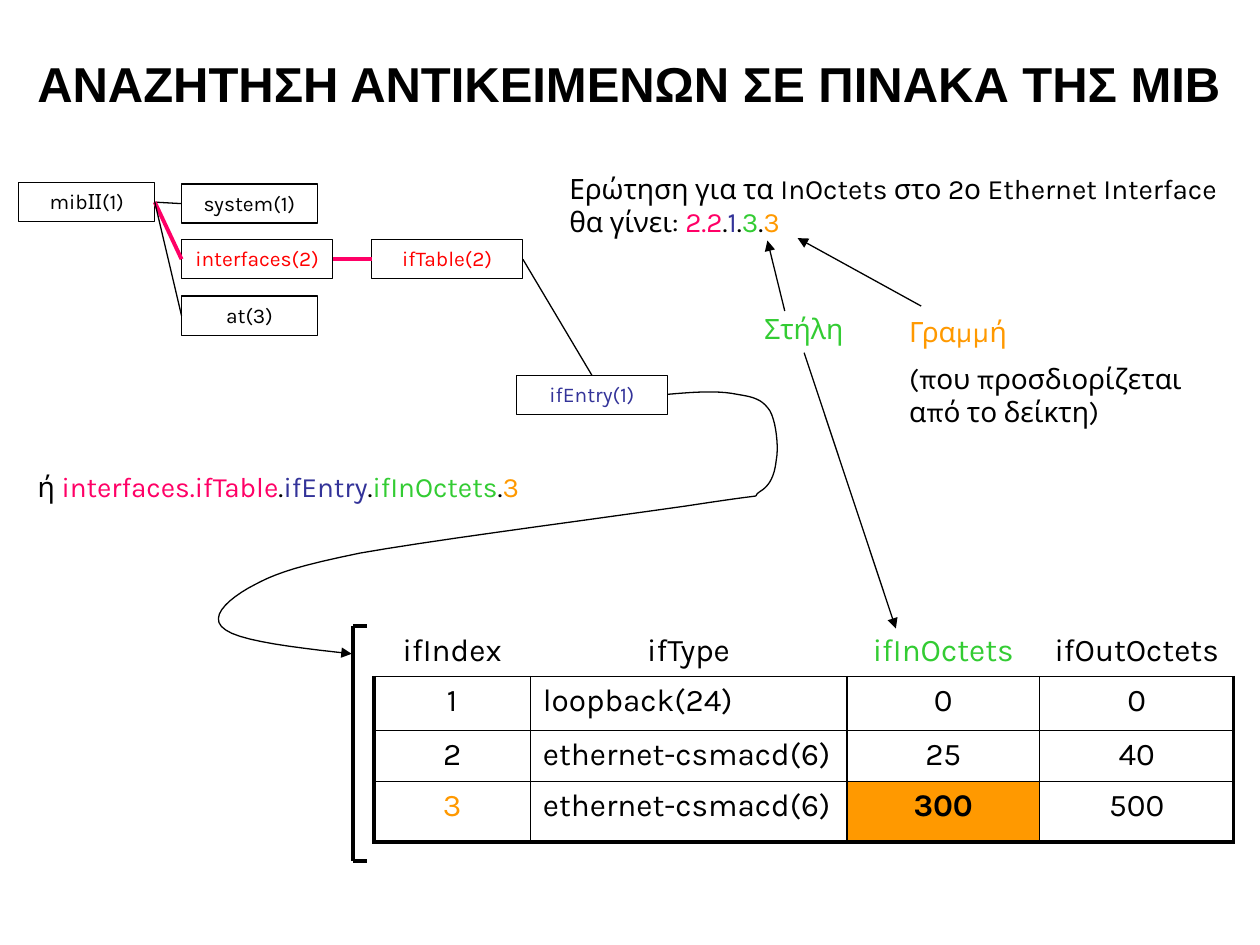
import pptx
import pptx.util
import pptx.dml.color
import pptx.enum.shapes
import pptx.enum.text
import pptx.oxml.ns
from lxml import etree

Cm, Pt = pptx.util.Cm, pptx.util.Pt
qn = pptx.oxml.ns.qn
ALIGN = pptx.enum.text.PP_ALIGN
COLORS = {"black": "000000", "red": "FF0000", "pink": "FF0066",
          "blue": "333399", "green": "33CC33", "orange": "FF9900"}
TOP, LEFT, RIGHT = 0, 1, 3  # connection sites of a rectangle


def rgb(name):
    return pptx.dml.color.RGBColor.from_string(COLORS[name])


def bezier(start, segments, steps=10):
    """Points along a chain of cubic curves given as (control, control, end)."""
    points = [start]
    for c1, c2, end in segments:
        for t in (i / steps for i in range(1, steps + 1)):
            weights = ((1 - t) ** 3, 3 * t * (1 - t) ** 2, 3 * t * t * (1 - t), t ** 3)
            points.append(tuple(sum(w * p[axis] for w, p in zip(weights, (start, c1, c2, end)))
                                for axis in (0, 1)))
        start = end
    return points


class Diagram:
    font = "Karla"
    thin, thick = 0.75, 2.25

    def __init__(self, slide):
        self.s = slide

    def add_runs(self, p, runs, size, align=ALIGN.LEFT, bold=False, font=None):
        """Fill a paragraph with (text, colour) runs."""
        p.alignment = align
        for text, color in runs:
            r = p.add_run()
            r.text = text
            r.font.name, r.font.size, r.font.bold = font or self.font, Pt(size), bold
            r.font.color.rgb = rgb(color)

    def stroke(self, sp, color, width, arrow=False):
        sp.line.color.rgb = rgb(color)
        sp.line.width = Pt(width)
        if arrow:
            etree.SubElement(sp.line._get_or_add_ln(), qn("a:tailEnd"), type="triangle")

    def title(self, text, x, y, w, h):
        sp = self.s.shapes.title
        sp.left, sp.top, sp.width, sp.height = Cm(x), Cm(y), Cm(w), Cm(h)
        tf = sp.text_frame
        tf.vertical_anchor = pptx.enum.text.MSO_ANCHOR.MIDDLE
        self.add_runs(tf.paragraphs[0], [(text, "black")], 28, ALIGN.CENTER, True, "Arial")

    def fit(self, tf):
        tf.word_wrap = True
        tf.auto_size = pptx.enum.text.MSO_AUTO_SIZE.SHAPE_TO_FIT_TEXT
        tf.vertical_anchor = pptx.enum.text.MSO_ANCHOR.TOP

    def node(self, text, x, y, w, color="black"):
        sp = self.s.shapes.add_shape(pptx.enum.shapes.MSO_SHAPE.RECTANGLE,
                                     Cm(x), Cm(y), Cm(w), Cm(0.79))
        sp.shadow.inherit = False
        sp.fill.background()
        self.stroke(sp, "black", self.thin)
        self.fit(sp.text_frame)
        self.add_runs(sp.text_frame.paragraphs[0], [(text, color)], 12, ALIGN.CENTER)
        return sp

    def text(self, x, y, w, h, *paragraphs):
        tf = self.s.shapes.add_textbox(Cm(x), Cm(y), Cm(w), Cm(h)).text_frame
        self.fit(tf)
        for i, runs in enumerate(paragraphs):
            p = tf.add_paragraph() if i else tf.paragraphs[0]
            if i:
                p.space_before = Pt(7.5)
            self.add_runs(p, runs, 16)

    def line(self, x1, y1, x2, y2, color="black", width=thin, arrow=False):
        cx = self.s.shapes.add_connector(pptx.enum.shapes.MSO_CONNECTOR.STRAIGHT,
                                         Cm(x1), Cm(y1), Cm(x2), Cm(y2))
        self.stroke(cx, color, width, arrow)
        etree.SubElement(cx._element.spPr, qn("a:effectLst"))
        return cx

    def link(self, a, b, site=LEFT, color="black", width=thin):
        """Join the right side of node a to a side of node b."""
        cx = self.line(0, 0, 1, 1, color, width)
        cx.begin_connect(a, RIGHT)
        cx.end_connect(b, site)

    def curve(self, start, segments):
        points = [(Cm(x), Cm(y)) for x, y in bezier(start, segments)]
        builder = self.s.shapes.build_freeform(*points[0])
        builder.add_line_segments(points[1:], close=False)
        sp = builder.convert_to_shape()
        sp.shadow.inherit = False
        sp.fill.background()
        self.stroke(sp, "black", self.thin, arrow=True)

    def border(self, cell, widths):
        tcPr = cell._tc.get_or_add_tcPr()
        for i, (side, width) in enumerate(zip("LRTB", widths)):
            ln = etree.Element(qn(f"a:ln{side}"), w=str(Pt(width)))
            fill = etree.SubElement(ln, qn("a:solidFill"))
            etree.SubElement(fill, qn("a:srgbClr"), val=COLORS["black"])
            tcPr.insert(i, ln)

    def table(self, x, y, col_widths, row_heights, rows, colors, highlight):
        n, m = len(rows), len(col_widths)
        tbl = self.s.shapes.add_table(n, m, Cm(x), Cm(y), Cm(sum(col_widths)),
                                      Cm(sum(row_heights))).table
        tbl.first_row = tbl.horz_banding = False
        # "No Style, No Grid"
        tbl._tbl.tblPr.find(qn("a:tableStyleId")).text = "{2D5ABB26-0587-4C30-8999-92F81FD0307C}"
        for col, width in zip(tbl.columns, col_widths):
            col.width = Cm(width)
        for row, height in zip(tbl.rows, row_heights):
            row.height = Cm(height)
        for i, row in enumerate(rows):
            for j, value in enumerate(row):
                cell, marked = tbl.cell(i, j), (i, j) == highlight
                align = ALIGN.LEFT if i and j == 1 else ALIGN.CENTER
                self.add_runs(cell.text_frame.paragraphs[0],
                              [(value, colors.get((i, j), "black"))], 18, align, marked)
                if marked:
                    cell.fill.solid()
                    cell.fill.fore_color.rgb = rgb("orange")
                else:
                    cell.fill.background()
                if i:
                    outer = (j == 0, j == m - 1, False, i == n - 1)
                    self.border(cell, [self.thick if edge else 1 for edge in outer])


def main():
    prs = pptx.Presentation()
    prs.slide_width, prs.slide_height = Cm(25.4), Cm(19.05)
    d = Diagram(prs.slides.add_slide(prs.slide_layouts[5]))
    d.title("ΑΝΑΖΗΤΗΣΗ ΑΝΤΙΚΕΙΜΕΝΩΝ ΣΕ ΠΙΝΑΚΑ ΤΗΣ ΜΙΒ", 0.43, 0, 24.49, 3.33)

    d.table(7.54, 12.62, [3.15, 6.38, 3.89, 3.91], [1.02, 1.09, 1.02, 1.22],
            [["ifIndex", "ifType", "ifInOctets", "ifOutOctets"],
             ["1", "loopback(24)", "0", "0"],
             ["2", "ethernet-csmacd(6)", "25", "40"],
             ["3", "ethernet-csmacd(6)", "300", "500"]],
            colors={(0, 2): "green", (3, 0): "orange"}, highlight=(3, 2))

    mib = d.node("mibΙΙ(1)", 0.38, 3.68, 2.74)
    system = d.node("system(1)", 3.66, 3.71, 2.74)
    interfaces = d.node("interfaces(2)", 3.66, 4.83, 3.05, "red")
    at = d.node("at(3)", 3.66, 5.97, 2.74)
    if_table = d.node("ifTable(2)", 7.49, 4.83, 3.05, "red")
    if_entry = d.node("ifEntry(1)", 10.41, 7.57, 3.05, "blue")

    d.curve((13.46, 7.95), [
        ((14, 7.9), (14.5, 7.87), (14.86, 7.95)),
        ((15.19, 8), (15.37, 8.05), (15.52, 8.28)),
        ((15.65, 8.51), (15.7, 9.02), (15.65, 9.27)),
        ((15.62, 9.55), (15.54, 9.78), (15.32, 9.91)),
        ((15.09, 10.06), (15.62, 9.93), (14.3, 10.13)),
        ((12.95, 10.34), (8.81, 10.87), (7.26, 11.15)),
        ((5.74, 11.46), (5.46, 11.61), (5, 11.86)),
        ((4.55, 12.12), (4.19, 12.47), (4.55, 12.7)),
        ((4.88, 12.93), (5.99, 13.06), (7.09, 13.18))])

    d.link(mib, system)
    d.link(mib, interfaces, color="pink", width=d.thick)
    d.link(mib, at)
    d.link(interfaces, if_table, color="pink", width=d.thick)
    d.link(if_table, if_entry, TOP)

    bracket = [(7.39, 12.62), (7.11, 12.62), (7.11, 17.36), (7.39, 17.36)]
    for a, b in zip(bracket, bracket[1:]):
        d.line(*a, *b, width=d.thick)

    dot = (".", "black")
    d.text(11.23, 3.33, 13.77, 1.63,
           [("Ερώτηση για τα InOctets στο 2ο Ethernet Interface θα γίνει: ", "black"),
            ("2.2", "pink"), dot, ("1", "blue"), dot, ("3", "green"), dot, ("3", "orange")])
    d.text(15.16, 6.15, 2.16, 0.94, [("Στήλη", "green")])
    d.text(18.08, 6.22, 6.6, 2.64, [("Γραμμή", "orange")],
           [("(που προσδιορίζεται από το δείκτη)", "black")])
    for ends in [(15.82, 6.27, 15.47, 4.85), (16.21, 7.11, 18.06, 12.67),
                 (18.57, 6.17, 16.08, 4.8)]:
        d.line(*ends, arrow=True)
    d.text(0.51, 9.35, 13.77, 0.94,
           [("ή ", "black"), ("interfaces.ifTable", "pink"), dot, ("ifEntry", "blue"), dot,
            ("ifInOctets", "green"), dot, ("3", "orange")])
    prs.save("out.pptx")


if __name__ == "__main__":
    main()
